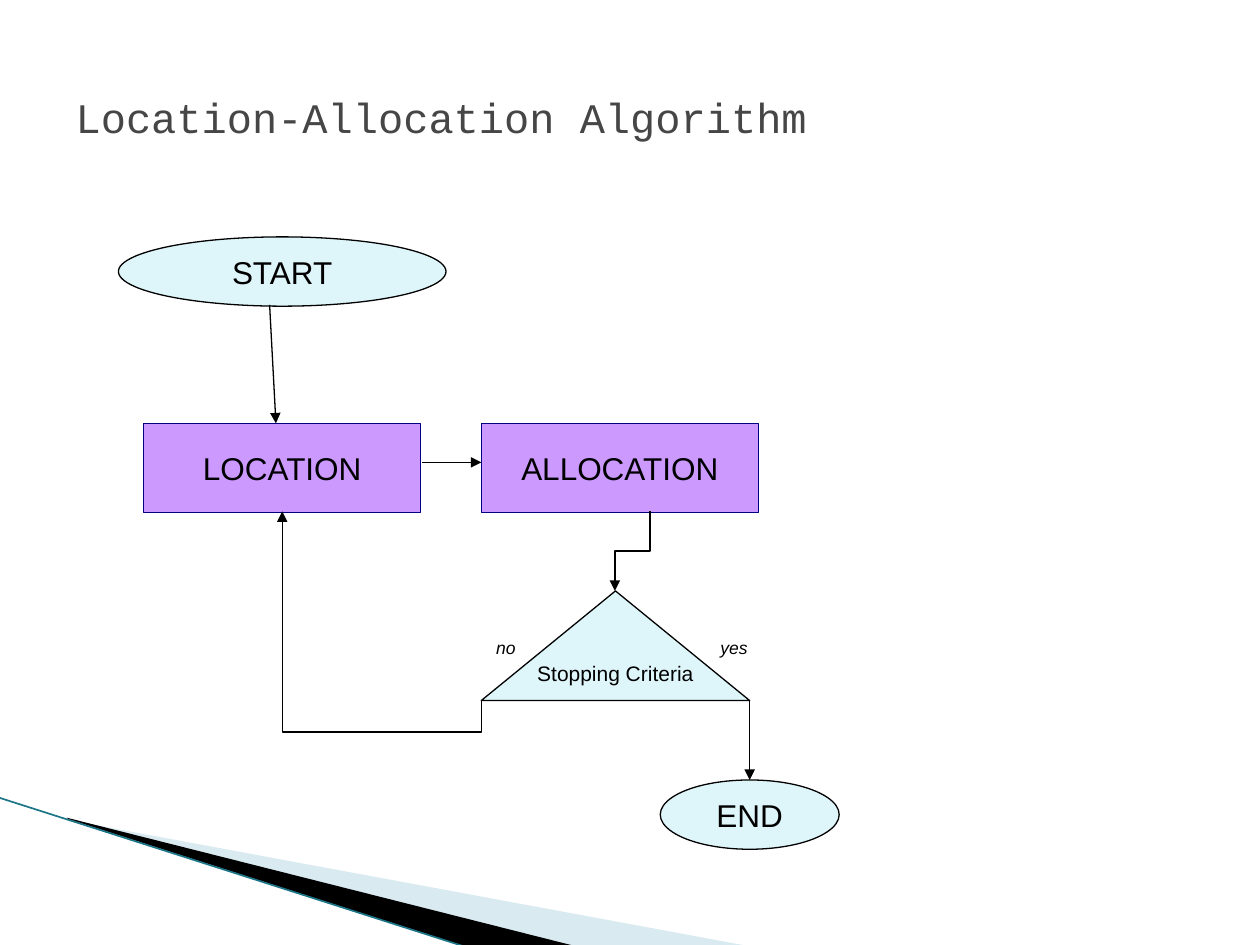
import pptx
import pptx.util
import pptx.dml.color
import pptx.enum.shapes
import pptx.enum.text
import pptx.oxml
import pptx.oxml.ns
import lxml.etree

Inches = pptx.util.Inches
Pt = pptx.util.Pt
qn = pptx.oxml.ns.qn
MSO = pptx.enum.shapes.MSO_SHAPE
CONN = pptx.enum.shapes.MSO_CONNECTOR
ALIGN = pptx.enum.text.PP_ALIGN
ANCHOR = pptx.enum.text.MSO_ANCHOR

TITLE = "Location-Allocation Algorithm"
BLACK, PURPLE, NAVY, PALE = "000000", "CC99FF", "000080", "DEF5FA"
WEDGES = [
    ([(0.55, 6.51), (5.95, 7.51), (4.56, 7.51), (0.55, 6.5)], "A0CBDC", 40),
    ([(0.53, 6.49), (4.57, 7.51), (3.72, 7.52), (0.54, 6.5)], BLACK, 100),
]
EDGE = ((-0.01, 6.33), (3.71, 7.52))
NODES = [
    ("LOCATION", MSO.RECTANGLE, (1.14, 3.36, 2.2, 0.71), PURPLE, NAVY, 18),
    ("ALLOCATION", MSO.RECTANGLE, (3.82, 3.36, 2.2, 0.71), PURPLE, NAVY, 18),
    ("START", MSO.OVAL, (0.94, 1.88, 2.6, 0.55), PALE, BLACK, 18),
    ("END", MSO.OVAL, (5.24, 6.19, 1.42, 0.55), PALE, BLACK, 18),
    ("Stopping Criteria", MSO.ISOSCELES_TRIANGLE, (3.82, 4.69, 2.13, 0.87), PALE, BLACK, 12),
]
ARROWS = [
    ((3.35, 3.67), (3.82, 3.67)),
    ((2.14, 2.42), (2.19, 3.36)),
    ((5.95, 5.56), (5.95, 6.19)),
]
ELBOWS = [
    ((5.16, 4.06), (4.88, 4.69), 0.5),
    ((3.82, 5.56), (2.24, 4.06), -0.167),
]
LABELS = [("yes", 5.55, 0.55), ("no", 3.82, 0.39)]


def rgb(value):
    return pptx.dml.color.RGBColor.from_string(value)


def write(tf, text, size, font="Arial", color=BLACK, align=ALIGN.CENTER,
          italic=False, anchor=ANCHOR.MIDDLE, wrap=False):
    tf.word_wrap = wrap
    tf.vertical_anchor = anchor
    p = tf.paragraphs[0]
    p.alignment = align
    r = p.add_run()
    r.text = text
    r.font.name, r.font.size, r.font.italic = font, Pt(size), italic
    r.font.color.rgb = rgb(color)


def add_line(shapes, start, end, color=BLACK, width=0.75, arrow=True, kind=CONN.STRAIGHT):
    cxn = shapes.add_connector(kind, *(Inches(v) for v in start + end))
    cxn.line.color.rgb = rgb(color)
    cxn.line.width = Pt(width)
    if arrow:
        lxml.etree.SubElement(cxn.line._get_or_add_ln(), qn("a:tailEnd"), type="triangle")
    lxml.etree.SubElement(cxn._element.spPr, qn("a:effectLst"))
    return cxn


def add_elbow(shapes, start, end, bend):
    (x1, y1), (x2, y2) = start, end
    cx, cy = (x1 + x2) / 2, (y1 + y2) / 2
    half_w, half_h = abs(y2 - y1) / 2, abs(x2 - x1) / 2
    down = y2 > y1
    rise = -half_h if down else half_h
    cxn = add_line(shapes, (cx - half_w, cy + rise), (cx + half_w, cy - rise), kind=CONN.ELBOW)
    spPr = cxn._element.spPr
    spPr.find(qn("a:xfrm")).set("rot", str((90 if down else 270) * 60000))
    geom = spPr.find(qn("a:prstGeom"))
    av = geom.find(qn("a:avLst"))
    if av is None:
        av = lxml.etree.SubElement(geom, qn("a:avLst"))
    lxml.etree.SubElement(av, qn("a:gd"), name="adj1", fmla=f"val {round(bend * 100000)}")


def add_wedge(shapes, points, color, opacity):
    pts = [(Inches(x), Inches(y)) for x, y in points]
    builder = shapes.build_freeform(*pts[0])
    builder.add_line_segments(pts[1:], close=True)
    sp = builder.convert_to_shape()
    sp.shadow.inherit = False
    sp.fill.solid()
    sp.fill.fore_color.rgb = rgb(color)
    sp.line.fill.background()
    if opacity < 100:
        clr = sp._element.spPr.find(qn("a:solidFill"))[0]
        lxml.etree.SubElement(clr, qn("a:alpha"), val=str(opacity * 1000))


def add_node(shapes, text, kind, box, fill, line, size):
    sp = shapes.add_shape(kind, *(Inches(v) for v in box))
    sp.shadow.inherit = False
    sp.fill.solid()
    sp.fill.fore_color.rgb = rgb(fill)
    sp.line.color.rgb = rgb(line)
    sp.line.width = Pt(0.75)
    write(sp.text_frame, text, size)


def main():
    prs = pptx.Presentation()
    prs.slide_width, prs.slide_height = Inches(10), Inches(7.5)
    s = prs.slides.add_slide(prs.slide_layouts[5])
    shapes = s.shapes

    title = shapes.title
    title.left, title.top, title.width, title.height = (Inches(v) for v in (0.5, 0.3, 9, 1.25))
    write(title.text_frame, TITLE, 24, font="Courier New", color="464646",
          align=ALIGN.LEFT, wrap=True)

    for wedge in WEDGES:
        add_wedge(shapes, *wedge)
    add_line(shapes, *EDGE, color="1B7587", width=0.95, arrow=False)
    for node in NODES:
        add_node(shapes, *node)
    for arrow in ARROWS:
        add_line(shapes, *arrow)
    for elbow in ELBOWS:
        add_elbow(shapes, *elbow)
    for text, left, width in LABELS:
        tb = shapes.add_textbox(Inches(left), Inches(5.01), Inches(width), Inches(0.27))
        write(tb.text_frame, text, 10, italic=True, anchor=ANCHOR.TOP, wrap=True)

    prs.save("out.pptx")


if __name__ == "__main__":
    main()
